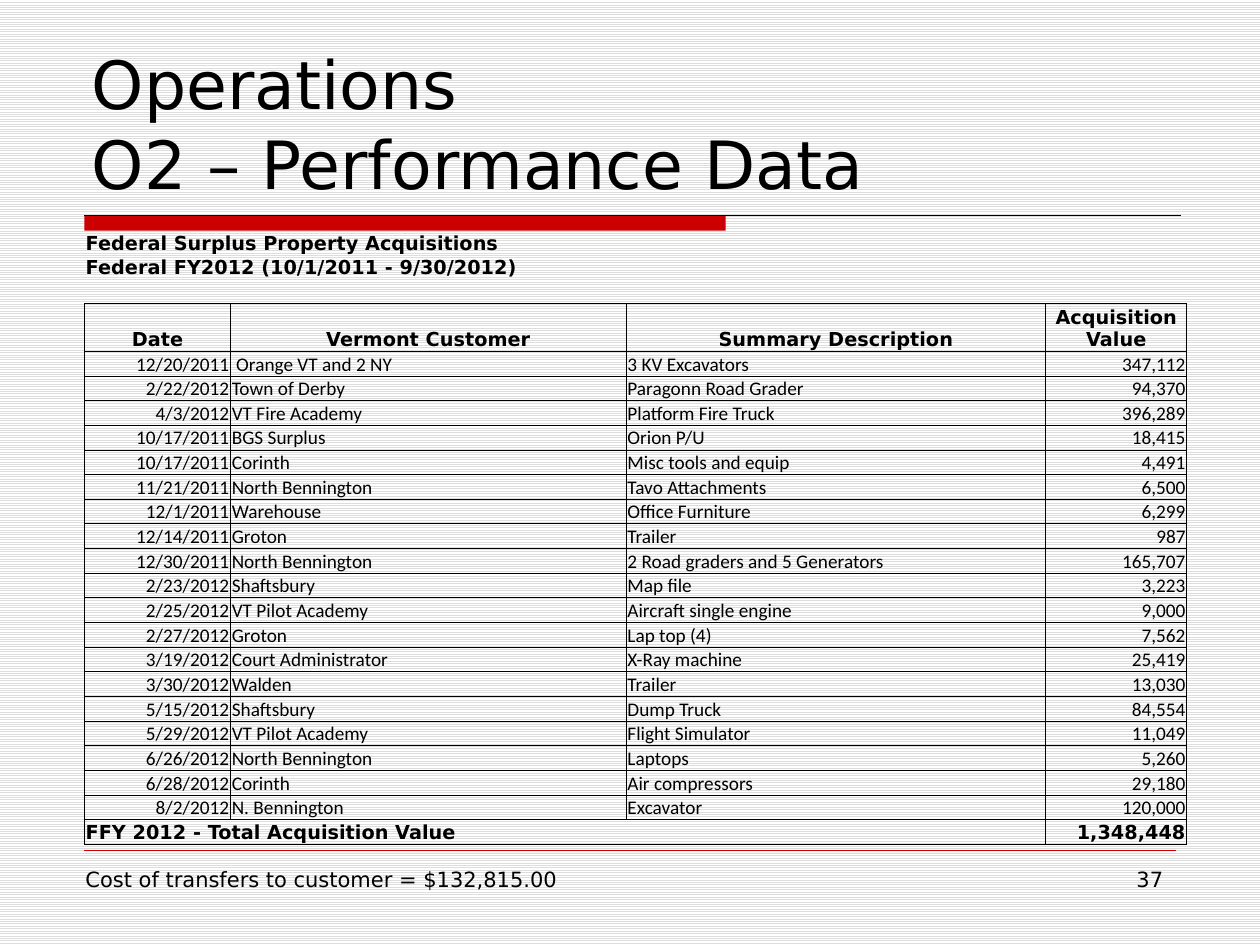
from collections import namedtuple
from lxml.etree import SubElement
from pptx import Presentation
from pptx.dml.color import RGBColor
from pptx.enum.dml import MSO_PATTERN
from pptx.enum.shapes import MSO_CONNECTOR, MSO_SHAPE
from pptx.enum.text import MSO_ANCHOR as ANCHOR, PP_ALIGN as ALIGN
from pptx.oxml.ns import qn
from pptx.util import Inches, Pt

Box = namedtuple("Box", "x y w h")
W, H = Inches(10), Inches(7.5)
COL, ROW = W / 1000, H / 750
HEAD_FONT, BODY_FONT = "DejaVu Sans", "Calibri"
BLACK, RED = "000000", "CC0000"

CAPTIONS = ["Federal Surplus Property Acquisitions",
            "Federal FY2012 (10/1/2011 - 9/30/2012)"]
HEADINGS = ["Date", "Vermont Customer", "Summary Description", "Acquisition Value"]
ACQUISITIONS = [
    ("12/20/2011", " Orange VT and 2 NY", "3 KV Excavators", "347,112"),
    ("2/22/2012", "Town of Derby", "Paragonn Road Grader", "94,370"),
    ("4/3/2012", "VT Fire Academy", "Platform Fire Truck", "396,289"),
    ("10/17/2011", "BGS Surplus", "Orion P/U", "18,415"),
    ("10/17/2011", "Corinth", "Misc tools and equip", "4,491"),
    ("11/21/2011", "North Bennington", "Tavo Attachments", "6,500"),
    ("12/1/2011", "Warehouse", "Office Furniture", "6,299"),
    ("12/14/2011", "Groton", "Trailer", "987"),
    ("12/30/2011", "North Bennington", "2 Road graders and 5 Generators", "165,707"),
    ("2/23/2012", "Shaftsbury", "Map file", "3,223"),
    ("2/25/2012", "VT Pilot Academy", "Aircraft single engine", "9,000"),
    ("2/27/2012", "Groton", "Lap top (4)", "7,562"),
    ("3/19/2012", "Court Administrator", "X-Ray machine", "25,419"),
    ("3/30/2012", "Walden", "Trailer", "13,030"),
    ("5/15/2012", "Shaftsbury", "Dump Truck", "84,554"),
    ("5/29/2012", "VT Pilot Academy", "Flight Simulator", "11,049"),
    ("6/26/2012", "North Bennington", "Laptops", "5,260"),
    ("6/28/2012", "Corinth", "Air compressors", "29,180"),
    ("8/2/2012", "N. Bennington", "Excavator", "120,000"),
]
TOTAL = ("FFY 2012 - Total Acquisition Value", "1,348,448")


def color(value):
    return RGBColor.from_string(value)


def place(box):
    return round(box.x * COL), round(box.y * ROW), round(box.w * COL), round(box.h * ROW)


def add_run(p, text, size, font=HEAD_FONT, bold=False):
    r = p.add_run()
    r.text = text
    r.font.size, r.font.name, r.font.bold = Pt(size), font, bold
    r.font.color.rgb = color(BLACK)


def add_text(s, box, lines, size, align=ALIGN.LEFT, anchor=ANCHOR.TOP):
    tf = s.shapes.add_textbox(*place(box)).text_frame
    tf.word_wrap = True
    tf.vertical_anchor = anchor
    p = tf.paragraphs[0]
    p.alignment = align
    for i, line in enumerate(lines):
        if i:
            p.add_line_break()
        add_run(p, line, size)


def add_rule(s, x, y, w, value, width):
    left, top, length, _ = place(Box(x, y, w, 0))
    line = s.shapes.add_connector(MSO_CONNECTOR.STRAIGHT, left, top, left + length, top)
    line.line.color.rgb = color(value)
    line.line.width = Pt(width)
    SubElement(line._element.spPr, qn("a:effectLst"))


def title_region(s, box):
    add_text(s, box, ["Operations", "O2 – Performance Data"], 38, anchor=ANCHOR.BOTTOM)


def divider_region(s, box):
    bar = s.shapes.add_shape(MSO_SHAPE.RECTANGLE, *place(box._replace(w=box.w * 0.585)))
    bar.shadow.inherit = False
    bar.fill.solid()
    bar.fill.fore_color.rgb = color(RED)
    bar.line.fill.background()
    add_rule(s, box.x, box.y, box.w, BLACK, 0.75)


def style_cell(cell, sides):
    cell.margin_left = cell.margin_right = cell.margin_top = Inches(0.01)
    cell.margin_bottom = 0
    cell.vertical_anchor = ANCHOR.BOTTOM
    tc_pr = cell._tc.get_or_add_tcPr()
    for side in "LRTB":
        ln = SubElement(tc_pr, qn(f"a:ln{side}"), w=str(Pt(0.5)))
        if side in sides:
            fill = SubElement(ln, qn("a:solidFill"))
            SubElement(fill, qn("a:srgbClr"), val=BLACK)
        else:
            SubElement(ln, qn("a:noFill"))
    cell.fill.background()


def fill_cell(cell, text, align=ALIGN.LEFT, font=HEAD_FONT, bold=True):
    p = cell.text_frame.paragraphs[0]
    p.alignment = align
    add_run(p, text, 11, font, bold)


def table_region(s, box):
    count = len(ACQUISITIONS)
    small, heading = 19, 37
    data = (box.h - 4 * small - heading) / count
    heights = [small] * 3 + [heading] + [data] * count + [small]
    tbl = s.shapes.add_table(len(heights), 4, *place(box)).table
    tbl.first_row = tbl.horz_banding = False
    for column, width in zip(tbl.columns, [116, 314, 333, 112]):
        column.width = round(width * COL)
    for i, height in enumerate(heights):
        tbl.rows[i].height = round(height * ROW)
        for cell in tbl.rows[i].cells:
            style_cell(cell, "" if i < 2 else "B" if i == 2 else "LRTB")
    for i, caption in enumerate(CAPTIONS):
        tbl.cell(i, 0).merge(tbl.cell(i, 3))
        fill_cell(tbl.cell(i, 0), caption)
    for cell in tbl.rows[2].cells:
        SubElement(cell.text_frame.paragraphs[0]._p, qn("a:endParaRPr"), sz="1100")
    for j, text in enumerate(HEADINGS):
        fill_cell(tbl.cell(3, j), text, ALIGN.CENTER)
    aligns = [ALIGN.RIGHT, ALIGN.LEFT, ALIGN.LEFT, ALIGN.RIGHT]
    for i, record in enumerate(ACQUISITIONS, 4):
        for j, (text, align) in enumerate(zip(record, aligns)):
            fill_cell(tbl.cell(i, j), text, align, BODY_FONT, False)
    last = len(heights) - 1
    tbl.cell(last, 0).merge(tbl.cell(last, 2))
    fill_cell(tbl.cell(last, 0), TOTAL[0])
    fill_cell(tbl.cell(last, 3), TOTAL[1], ALIGN.RIGHT)


def footer_region(s, box):
    add_rule(s, box.x, box.y, box.w, RED, 0.25)
    top = box.y + 8
    add_text(s, Box(box.x + box.w * 0.75, top, box.w * 0.25, 52), ["37"], 12, ALIGN.RIGHT)
    add_text(s, Box(box.x - 9, top, 817, 30),
             ["Cost of transfers to customer = $132,815.00"], 12)


def main():
    prs = Presentation()
    prs.slide_width, prs.slide_height = W, H
    s = prs.slides.add_slide(prs.slide_layouts[6])
    fill = s.background.fill
    fill.patterned()
    fill.pattern = MSO_PATTERN.LIGHT_HORIZONTAL
    fill.fore_color.rgb = color("DDDDDD")
    fill.back_color.rgb = color("FFFFFF")
    divider_region(s, Box(67, 171, 870, 12))
    title_region(s, Box(63, 33, 875, 133))
    table_region(s, Box(67, 183, 875, 485))
    footer_region(s, Box(67, 675, 866, 60))
    prs.save("out.pptx")


if __name__ == "__main__":
    main()
